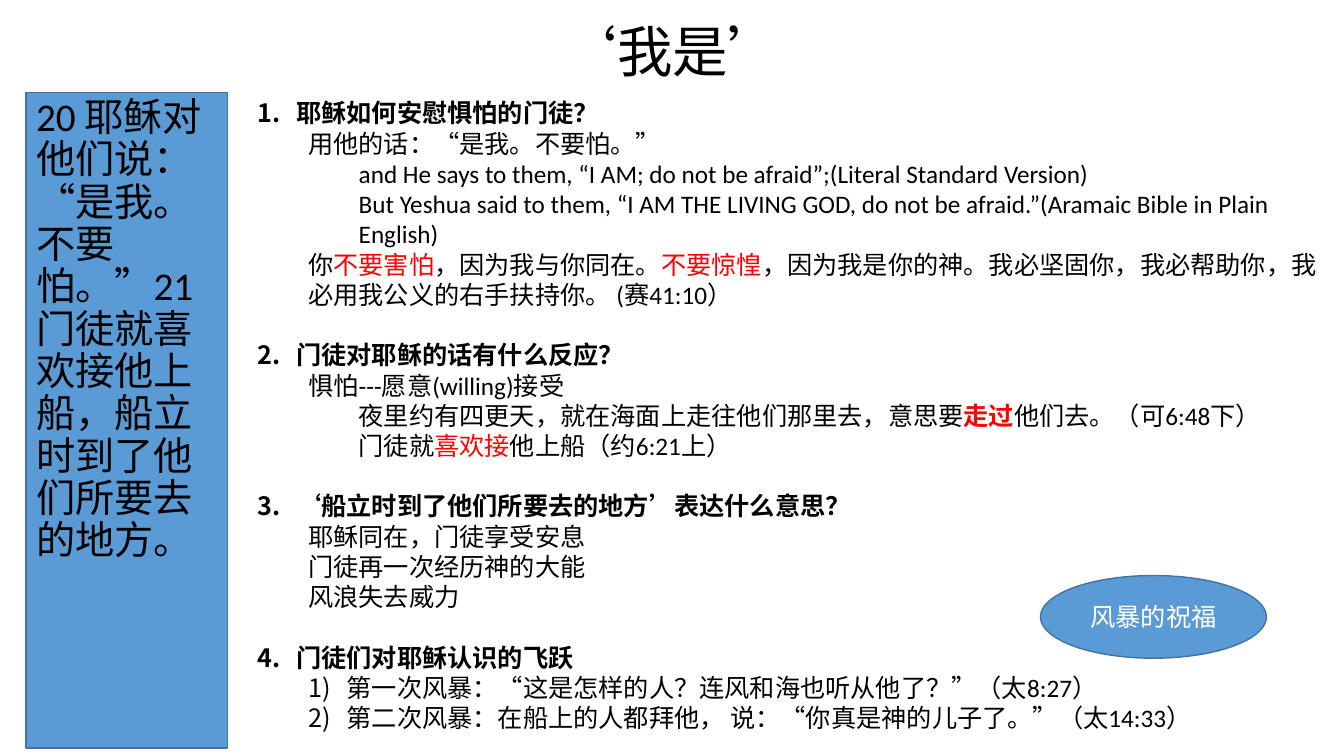
from pptx import Presentation
from pptx.dml.color import RGBColor
from pptx.enum.shapes import MSO_SHAPE
from pptx.enum.text import MSO_ANCHOR, MSO_AUTO_SIZE, PP_ALIGN
from pptx.oxml.ns import qn
from pptx.util import Inches, Pt
from lxml import etree

RECT, OVAL = MSO_SHAPE.RECTANGLE, MSO_SHAPE.OVAL
TOP, MIDDLE = MSO_ANCHOR.TOP, MSO_ANCHOR.MIDDLE
LEFT, CENTER = PP_ALIGN.LEFT, PP_ALIGN.CENTER
FIXED, GROW = MSO_AUTO_SIZE.NONE, MSO_AUTO_SIZE.SHAPE_TO_FIT_TEXT

FONT = "Calibri"
BLACK, WHITE, RED = "000000", "FFFFFF", "FF0000"
BLUE, EDGE = "5B9BD5", "43739E"
BODY = 18
GAP = 21.6  # one line of body text

# kind: (level, left margin, first-line indent, numbering)
KINDS = {
    "head": (0, 0.38, -0.38, "arabicPeriod"),
    "note": (1, 0.5, 0, None),
    "quote": (2, 1, 0, None),
    "step": (1, 0.88, -0.38, "arabicParenR"),
}

VERSE = ("20 耶稣对他们说：“是我。不要怕。”21门徒就喜欢接他上船，"
         "船立时到了他们所要去的地方。")

# Each section is a heading and its lines; text between bars is red.
SECTIONS = [
    ("耶稣如何安慰惧怕的门徒？", [
        ("note", "用他的话：“是我。不要怕。”"),
        ("quote", "and He says to them, “I AM; do not be afraid”;"
                  "(Literal Standard Version)"),
        ("quote", "But Yeshua said to them, “I AM THE LIVING GOD, "
                  "do not be afraid.”(Aramaic Bible in Plain English)"),
        ("note", "你|不要害怕|，因为我与你同在。|不要惊惶|，因为我是你的神。"
                 "我必坚固你，我必帮助你，我必用我公义的右手扶持你。 (赛41:10）"),
    ]),
    ("门徒对耶稣的话有什么反应？", [
        ("note", "惧怕---愿意(willing)接受"),
        ("quote", "夜里约有四更天，就在海面上走往他们那里去，意思要"
                  "|走过|他们去。（可6:48下）"),
        ("quote", "门徒就|喜欢接|他上船（约6:21上）"),
    ]),
    ("‘船立时到了他们所要去的地方’表达什么意思？", [
        ("note", "耶稣同在，门徒享受安息"),
        ("note", "门徒再一次经历神的大能"),
        ("note", "风浪失去威力"),
    ]),
    ("门徒们对耶稣认识的飞跃", [
        ("step", "第一次风暴：“这是怎样的人？连风和海也听从他了？”（太8:27）"),
        ("step", "第二次风暴：在船上的人都拜他， 说：“你真是神的儿子了。”（太14:33）"),
    ]),
]
STRONG = {"走过"} | {head for head, _ in SECTIONS}


def color(code):
    return RGBColor.from_string(code)


def style(run, size, code=BLACK, bold=False):
    font = run.font
    font.name, font.size, font.bold = FONT, Pt(size), bold
    font.color.rgb = color(code)


def write(shape, text, size, code=BLACK, align=LEFT, anchor=MIDDLE):
    frame = shape.text_frame
    frame.text = text
    frame.word_wrap, frame.auto_size = True, FIXED
    frame.vertical_anchor = anchor
    para = frame.paragraphs[0]
    para.alignment = align
    style(para.runs[0], size, code)
    return para


def add_panel(slide, kind, left, top, width, height):
    shape = slide.shapes.add_shape(
        kind, Inches(left), Inches(top), Inches(width), Inches(height))
    shape.shadow.inherit = False
    shape.fill.solid()
    shape.fill.fore_color.rgb = color(BLUE)
    shape.line.color.rgb = color(EDGE)
    shape.line.width = Pt(1)
    return shape


def add_line(para, kind, text, start=1):
    level, margin, indent, number = KINDS[kind]
    para.level = level
    for i, part in enumerate(text.split("|")):
        run = para.add_run()
        run.text = part
        style(run, BODY, RED if i % 2 else BLACK, part in STRONG)
    props = para._p.get_or_add_pPr()
    props.set("marL", str(Inches(margin)))
    props.set("indent", str(Inches(indent)))
    if number:
        mark = etree.SubElement(props, qn("a:buAutoNum"), type=number)
        if start > 1:
            mark.set("startAt", str(start))


def add_outline(slide):
    box = slide.shapes.add_textbox(
        Inches(2.46), Inches(0.92), Inches(10.7), Inches(7.37))
    frame = box.text_frame
    frame.word_wrap, frame.auto_size = True, GROW
    frame.vertical_anchor = TOP
    for count, (head, lines) in enumerate(SECTIONS, 1):
        para = frame.paragraphs[0] if count == 1 else frame.add_paragraph()
        if count > 1:
            para.space_before = Pt(GAP)
        add_line(para, "head", head, count)
        for kind, text in lines:
            add_line(frame.add_paragraph(), kind, text)


def main():
    deck = Presentation()
    deck.slide_width, deck.slide_height = Inches(13.33), Inches(7.5)
    slide = deck.slides.add_slide(deck.slide_layouts[5])

    title = slide.shapes.title
    title.left, title.top = Inches(0.92), Inches(0.17)
    title.width, title.height = Inches(11.5), Inches(0.75)
    write(title, "‘我是’", 39.6, align=CENTER).line_spacing = 0.9

    verse = add_panel(slide, RECT, 0.26, 0.92, 2, 6.5)
    write(verse, VERSE, 28, anchor=TOP).line_spacing = 0.9

    add_outline(slide)

    badge = add_panel(slide, OVAL, 10.32, 5.71, 2.24, 0.82)
    write(badge, "风暴的祝福", BODY, WHITE, CENTER)

    deck.save("out.pptx")


if __name__ == "__main__":
    main()
